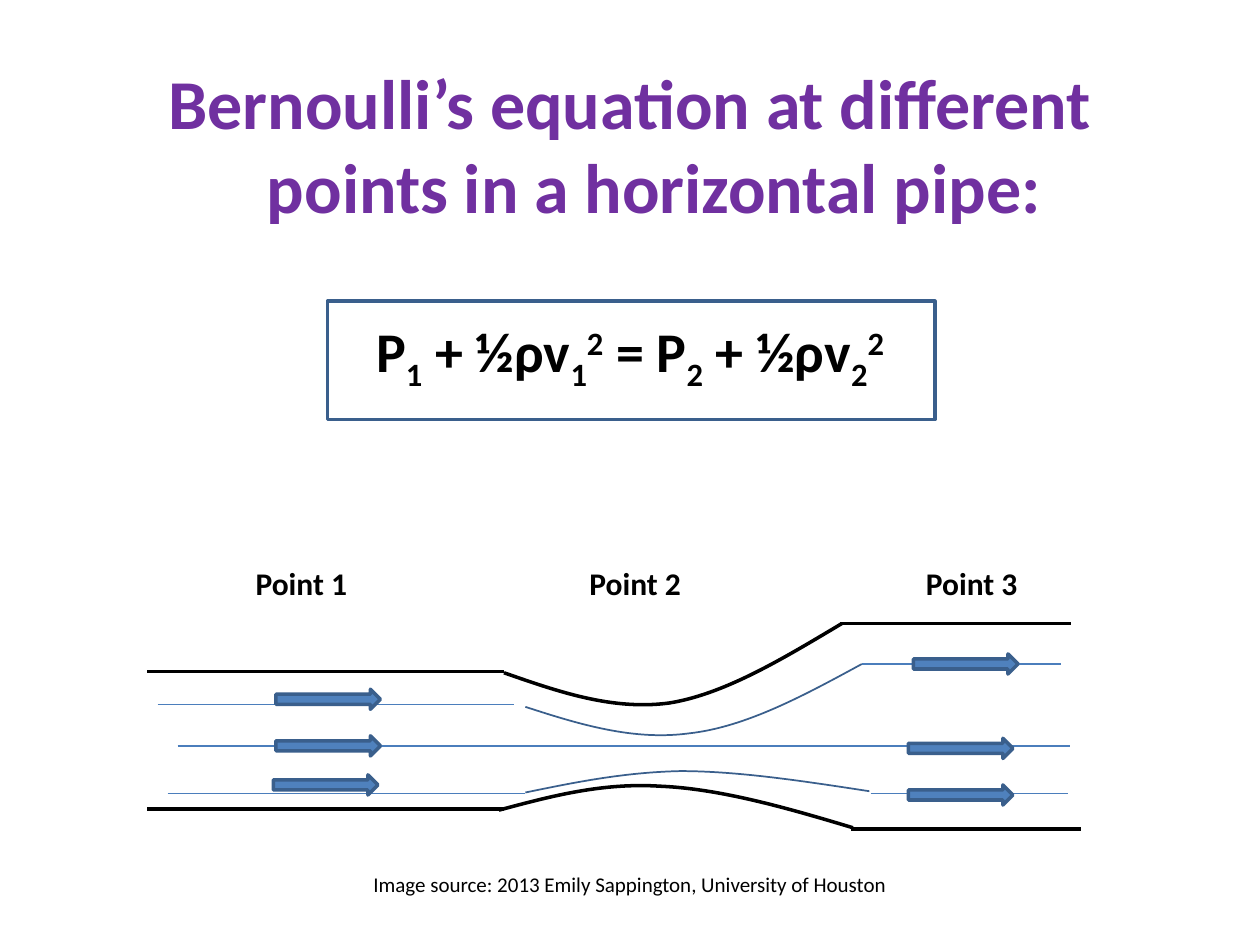
from lxml import etree
from pptx import Presentation
from pptx.dml.color import RGBColor
from pptx.enum.shapes import MSO_CONNECTOR, MSO_SHAPE
from pptx.enum.text import MSO_ANCHOR, MSO_AUTO_SIZE, PP_ALIGN
from pptx.oxml.ns import qn
from pptx.util import Inches, Pt

CENTER, LEFT = PP_ALIGN.CENTER, PP_ALIGN.LEFT
TOP = MSO_ANCHOR.TOP
NO_AUTOFIT = MSO_AUTO_SIZE.NONE
STRAIGHT = MSO_CONNECTOR.STRAIGHT
RECTANGLE, RIGHT_ARROW = MSO_SHAPE.RECTANGLE, MSO_SHAPE.RIGHT_ARROW

WIDTH, HEIGHT = 10, 7.5
FONT = "Calibri"
COLORS = {"title": "7030A0", "text": "000000", "wall": "000000",
          "stream": "4B7EBC", "outline": "3A5F8C", "arrow": "4F81BD"}
SUB, SUPER = -25000, 30000

TITLE = "Bernoulli’s equation at different points in a horizontal pipe:"
EQUATION = [("P", 0), ("1", SUB), (" + ½ρv", 0), ("1", SUB), ("2", SUPER),
            (" = P", 0), ("2", SUB), (" + ½ρv", 0), ("2", SUB), ("2", SUPER)]
SOURCE = "Image source: 2013 Emily Sappington, University of Houston"
POINTS = [("Point 1", 1.93), ("Point 2", 4.58), ("Point 3", 7.25)]

WALL_LINES = [(1.17, 4, 5.33), (1.17, 4, 6.42), (6.67, 8.5, 4.95), (6.75, 8.58, 6.58)]
STREAM_LINES = [(1.41, 8.49, 5.92), (1.33, 4.17, 6.3), (1.25, 4.08, 5.59),
                (6.84, 8.42, 5.27), (6.91, 8.48, 6.3)]
WALL_CURVES = [
    [(4, 5.34), (4.43, 5.49), (4.86, 5.64), (5.31, 5.58),
     (5.75, 5.51), (6.21, 5.23), (6.68, 4.95)],
    [(3.96, 6.43), (4.37, 6.32), (4.78, 6.21), (5.24, 6.24),
     (5.71, 6.26), (6.24, 6.41), (6.77, 6.57)],
]
STREAM_CURVES = [
    [(4.17, 5.61), (4.6, 5.75), (5.03, 5.88), (5.47, 5.82),
     (5.92, 5.77), (6.38, 5.52), (6.84, 5.27)],
    [(4.17, 6.29), (4.56, 6.21), (4.95, 6.13), (5.4, 6.12),
     (5.86, 6.12), (6.38, 6.2), (6.9, 6.28)],
]
ARROWS = [(2.19, 5.47), (2.19, 5.84), (2.17, 6.15), (7.25, 5.19), (7.21, 5.86), (7.21, 6.23)]
ARROW_SIZE = (0.83, 0.16)


def color(name):
    return RGBColor.from_string(COLORS[name])


def place(shape, left, top, width, height):
    shape.left, shape.top = Inches(left), Inches(top)
    shape.width, shape.height = Inches(width), Inches(height)


def write(shape, runs, size=18, bold=False, ink="text", align=CENTER, wrap=True, hanging=0):
    frame = shape.text_frame
    frame.auto_size = NO_AUTOFIT
    frame.word_wrap = wrap
    frame.vertical_anchor = TOP
    paragraph = frame.paragraphs[0]
    paragraph.alignment = align
    paragraph.space_before = Pt(0)
    properties = paragraph._p.get_or_add_pPr()
    properties.set("marL", str(Inches(hanging)))
    properties.set("indent", str(-Inches(hanging)))
    etree.SubElement(properties, qn("a:buNone"))
    for text, baseline in runs:
        run = paragraph.add_run()
        run.text = text
        run.font.name, run.font.size, run.font.bold = FONT, Pt(size), bold
        run.font.color.rgb = color(ink)
        if baseline:
            run._r.get_or_add_rPr().set("baseline", str(baseline))


def outline(shape, ink, weight):
    shape.line.color.rgb = color(ink)
    shape.line.width = Pt(weight)


def add_preset(shapes, preset, box, fill=None):
    shape = shapes.add_shape(preset, *map(Inches, box))
    shape.shadow.inherit = False
    if fill:
        shape.fill.solid()
        shape.fill.fore_color.rgb = color(fill)
    else:
        shape.fill.background()
    outline(shape, "outline", 2)


def add_level_line(shapes, start, end, height, ink, weight):
    line = shapes.add_connector(STRAIGHT, *map(Inches, (start, height, end, height)))
    outline(line, ink, weight)
    etree.SubElement(line._element.spPr, qn("a:effectLst"))


def add_curve(shapes, controls, ink, weight):
    points = [(Inches(x), Inches(y)) for x, y in controls]
    builder = shapes.build_freeform(*points[0])
    builder.add_line_segments(points[3::3], close=False)
    curve = builder.convert_to_shape()
    segments = list(curve._element.iter(qn("a:lnTo")))
    for index, segment in enumerate(segments):
        bezier = etree.Element(qn("a:cubicBezTo"))
        for x, y in points[3 * index + 1:3 * index + 4]:
            etree.SubElement(bezier, qn("a:pt"), x=str(x - curve.left), y=str(y - curve.top))
        segment.getparent().replace(segment, bezier)
    curve.shadow.inherit = False
    curve.fill.background()
    outline(curve, ink, weight)


def add_text(shapes, box, text, **formatting):
    write(shapes.add_textbox(*map(Inches, box)), [(text, 0)], **formatting)


def main():
    presentation = Presentation()
    presentation.slide_width, presentation.slide_height = Inches(WIDTH), Inches(HEIGHT)
    slide = presentation.slides.add_slide(presentation.slide_layouts[1])
    shapes = slide.shapes

    title, equation = shapes.title, slide.placeholders[1]
    place(title, 0.5, 0.42, 9, 1.5)
    write(title, [(TITLE, 0)], size=40, bold=True, ink="title", hanging=0.38)
    place(equation, 0.5, 2.46, 9, 0.8)
    write(equation, EQUATION, size=32, bold=True)
    add_preset(shapes, RECTANGLE, (2.6, 2.39, 4.82, 0.94))

    for lines, curves, ink, line_weight, curve_ink, curve_weight in (
            (WALL_LINES, WALL_CURVES, "wall", 2, "wall", 2),
            (STREAM_LINES, STREAM_CURVES, "stream", 0.75, "outline", 1)):
        for start, end, height in lines:
            add_level_line(shapes, start, end, height, ink, line_weight)
        for controls in curves:
            add_curve(shapes, controls, curve_ink, curve_weight)
    for corner in ARROWS:
        add_preset(shapes, RIGHT_ARROW, corner + ARROW_SIZE, fill="arrow")

    add_text(shapes, (2.65, 6.87, 4.7, 0.3), SOURCE, size=12)
    for label, left in POINTS:
        add_text(shapes, (left, 4.43, 0.95, 0.4), label, bold=True, align=LEFT, wrap=False)
    presentation.save("out.pptx")


if __name__ == "__main__":
    main()
